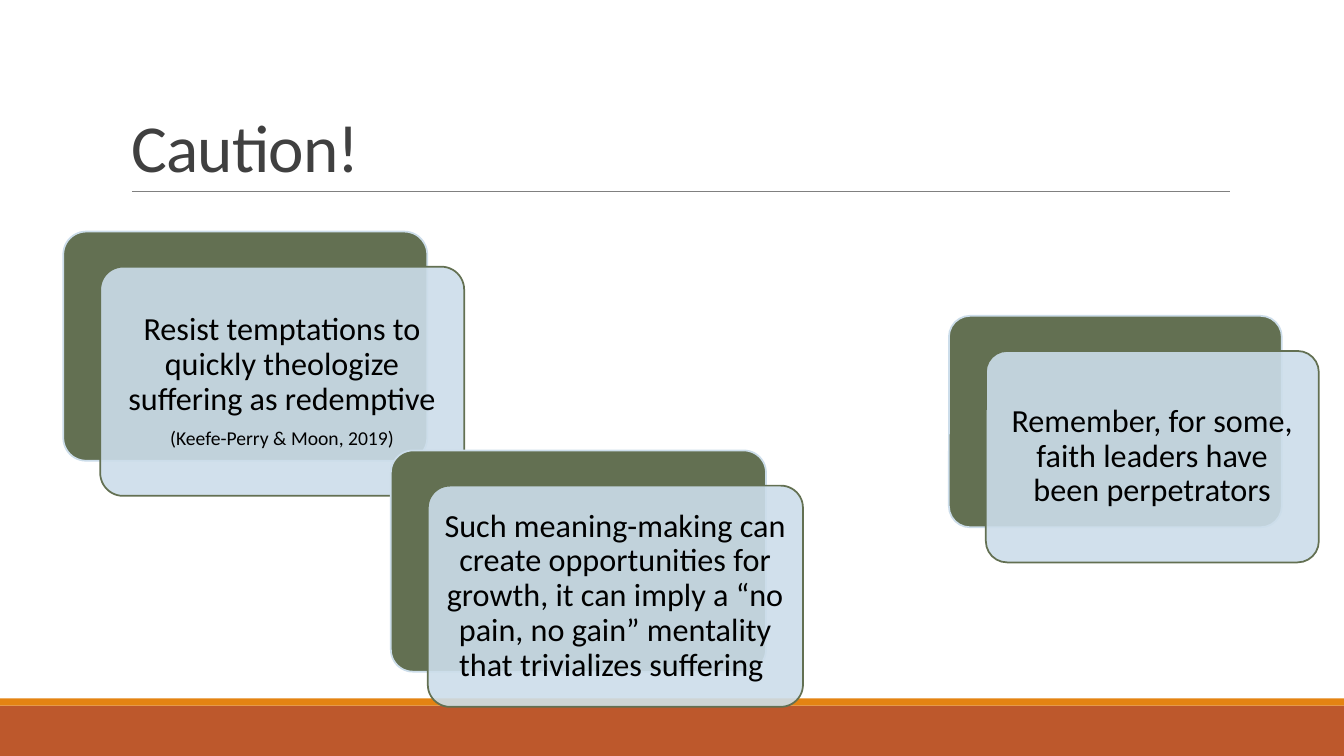
from lxml.etree import SubElement
from pptx import Presentation
from pptx.dml.color import RGBColor
from pptx.enum.shapes import MSO_CONNECTOR, MSO_SHAPE
from pptx.enum.text import MSO_ANCHOR, MSO_AUTO_SIZE, PP_ALIGN
from pptx.oxml.ns import qn
from pptx.util import Pt

FONT = "Calibri"
HUES = {
    "rust": "BD582C",
    "orange": "E48312",
    "rule": "808080",
    "title": "404040",
    "green": "637052",
    "blue": "CCDDEA",
    "text": "000000",
}
WIDE, HIGH = 960, 540
SHIFT = (26.4, 25.1)  # offset of each card from its backing
CARDS = [
    ((45.2, 165.4, 260, 163.7), [
        ("Resist temptations to quickly theologize suffering as redemptive", 23),
        ("(Keefe-Perry & Moon, 2019)", 14),
    ]),
    ((279.2, 321.8, 268, 158), [
        ("Such meaning-making can create opportunities for growth, it can imply "
         "a “no pain, no gain” mentality that trivializes suffering ", 23),
    ]),
    ((677.8, 225.6, 237.8, 151), [
        ("Remember, for some, faith leaders have been perpetrators", 23),
    ]),
]


def hue(name):
    return RGBColor.from_string(HUES[name])


def add_run(para, text, size, color):
    run = para.add_run()
    run.text = text
    run.font.name = FONT
    run.font.size = Pt(size)
    run.font.color.rgb = hue(color)
    return run


def add_box(slide, kind, box, fill, line=None):
    shape = slide.shapes.add_shape(kind, *map(Pt, box))
    shape.shadow.inherit = False
    shape.fill.solid()
    shape.fill.fore_color.rgb = hue(fill)
    if line:
        shape.line.color.rgb = hue(line)
        shape.line.width = Pt(1.25)
        shape.adjustments[0] = 0.1
    else:
        shape.line.fill.background()
    return shape


def add_rule(slide, left, right, y):
    rule = slide.shapes.add_connector(
        MSO_CONNECTOR.STRAIGHT, Pt(left), Pt(y), Pt(right), Pt(y))
    rule.line.color.rgb = hue("rule")
    rule.line.width = Pt(0.5)
    SubElement(rule._element.spPr, qn("a:effectLst"))


def set_title(slide, text):
    title = slide.shapes.title
    title.left, title.top, title.width, title.height = map(
        Pt, (86.4, 22.6, 792, 114.2))
    frame = title.text_frame
    frame.auto_size = MSO_AUTO_SIZE.NONE
    frame.vertical_anchor = MSO_ANCHOR.BOTTOM
    para = frame.paragraphs[0]
    para.alignment = PP_ALIGN.LEFT
    para.line_spacing = 0.85
    run = add_run(para, text, 48, "title")
    run.font._element.set("spc", "-50")


def add_card(slide, box, lines):
    """Draw a green backing and, shifted over it, a pale card with text."""
    left, top, width, height = box
    kind = MSO_SHAPE.ROUNDED_RECTANGLE
    add_box(slide, kind, box, "green", "blue")
    front = (left + SHIFT[0], top + SHIFT[1], width, height)
    card = add_box(slide, kind, front, "blue", "green")
    color = card._element.spPr.find(qn("a:solidFill"))[0]
    SubElement(color, qn("a:alpha"), val="90000")

    frame = card.text_frame
    frame.word_wrap = True
    frame.vertical_anchor = MSO_ANCHOR.MIDDLE
    frame.margin_left = frame.margin_right = Pt(6.8)
    frame.margin_top = frame.margin_bottom = Pt(6.8)
    for i, (text, size) in enumerate(lines):
        para = frame.add_paragraph() if i else frame.paragraphs[0]
        para.alignment = PP_ALIGN.CENTER
        para.line_spacing = 0.9
        para.space_after = Pt(round(size * 0.35))
        add_run(para, text, size, "text")


def main():
    deck = Presentation()
    deck.slide_width, deck.slide_height = Pt(WIDE), Pt(HIGH)
    slide = deck.slides.add_slide(deck.slide_layouts[5])
    add_box(slide, MSO_SHAPE.RECTANGLE, (0, 504, WIDE, 36), "rust")
    add_box(slide, MSO_SHAPE.RECTANGLE, (0, 498.8, WIDE, 5.2), "orange")
    add_rule(slide, 94.2, 878.8, 136.8)
    set_title(slide, "Caution!")
    for box, lines in CARDS:
        add_card(slide, box, lines)
    deck.save("out.pptx")


if __name__ == "__main__":
    main()
